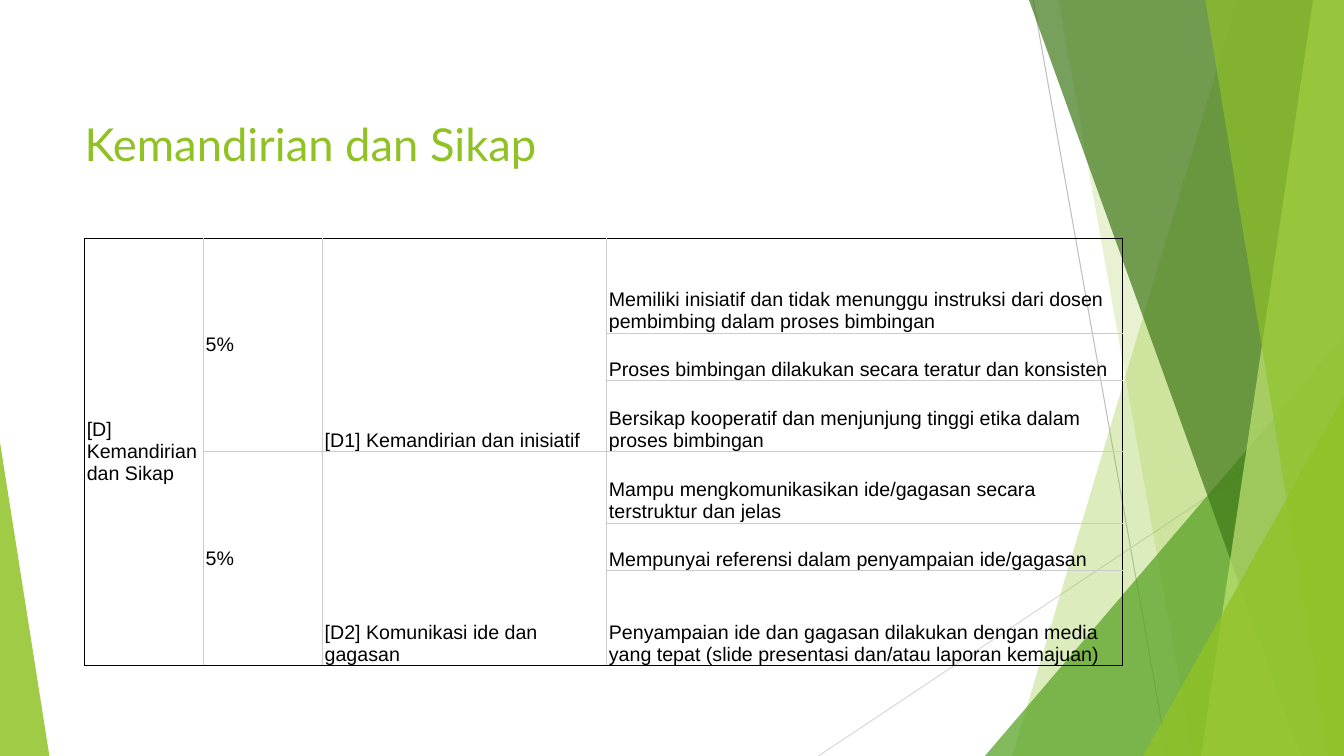
from lxml.etree import SubElement
from pptx import Presentation
from pptx.dml.color import RGBColor
from pptx.enum.shapes import MSO_CONNECTOR, MSO_SHAPE
from pptx.enum.text import MSO_ANCHOR, MSO_AUTO_SIZE, PP_ALIGN
from pptx.oxml.ns import qn
from pptx.util import Pt

WIDTH, HEIGHT = 960, 540
GREEN, BLACK, GREY = "90C226", "000000", "CCCCCC"

TITLE = "Kemandirian dan Sikap"
MIDDLE, BOTTOM = MSO_ANCHOR.MIDDLE, MSO_ANCHOR.BOTTOM
# Each column: width, anchor, then its cells as (text, rows spanned)
COLUMNS = [
    (85, MIDDLE, [("[D] Kemandirian dan Sikap", 6)]),
    (85, MIDDLE, [("5%", 3), ("5%", 3)]),
    (203, BOTTOM, [("[D1] Kemandirian dan inisiatif", 3),
                   ("[D2] Komunikasi ide dan gagasan", 3)]),
    (368.6, BOTTOM, [
        ("Memiliki inisiatif dan tidak menunggu instruksi dari dosen "
         "pembimbing dalam proses bimbingan", 1),
        ("Proses bimbingan dilakukan secara teratur dan konsisten", 1),
        ("Bersikap kooperatif dan menjunjung tinggi etika dalam proses bimbingan", 1),
        ("Mampu mengkomunikasikan ide/gagasan secara terstruktur dan jelas", 1),
        ("Mempunyai referensi dalam penyampaian ide/gagasan", 1),
        ("Penyampaian ide dan gagasan dilakukan dengan media yang tepat "
         "(slide presentasi dan/atau laporan kemajuan)", 1)]),
]
ROW_HEIGHTS = [67.8, 33.9, 51, 51, 33.9, 67.8]

# Decoration, back to front
LINES = [((738, 0), (834, HEIGHT), "BFBFBF"),
         ((WIDTH, 290), (584.6, HEIGHT), "D9D9D9")]
# Bands reach the right edge: top-left x, bottom-left x, colour, opacity
# Triangles: left, top, width, apex position, colour, opacity
DECOR = [
    ("band", (884, 723), GREEN, 30),
    ("band", (756, 852), GREEN, 20),
    ("triangle", (703.5, 240, 256.5, 1), "54A021", 72),
    ("band", (735, 929.5), "3F7819", 70),
    ("band", (938, 858), "C0E474", 70),
    ("band", (861, 949), GREEN, 65),
    ("triangle", (816.5, 283, 143.5, 1), GREEN, 80),
    ("triangle", (0, 316, 35.3, 0), GREEN, 85),
]


def rgb(color):
    return RGBColor.from_string(color)


def paint(shape, color, opacity):
    shape.shadow.inherit = False
    shape.line.fill.background()
    shape.fill.solid()
    shape.fill.fore_color.rgb = rgb(color)
    solid = shape._element.spPr.find(qn("a:solidFill"))
    SubElement(solid[0], qn("a:alpha"), val=str(opacity * 1000))


def add_band(page, top_x, bottom_x):
    outline = page.shapes.build_freeform(Pt(top_x), Pt(0))
    corners = [(WIDTH, 0), (WIDTH, HEIGHT), (bottom_x, HEIGHT)]
    outline.add_line_segments([(Pt(x), Pt(y)) for x, y in corners], close=True)
    return outline.convert_to_shape()


def add_triangle(page, left, top, width, apex):
    triangle = page.shapes.add_shape(MSO_SHAPE.ISOSCELES_TRIANGLE, Pt(left),
                                     Pt(top), Pt(width), Pt(HEIGHT - top))
    triangle.adjustments[0] = apex
    return triangle


def add_line(page, start, end, color):
    line = page.shapes.add_connector(MSO_CONNECTOR.STRAIGHT,
                                     *[Pt(value) for value in start + end])
    line.line.color.rgb = rgb(color)
    line.line.width = Pt(0.75)
    SubElement(line._element.spPr, qn("a:effectLst"))


def set_borders(cell, sides):
    """Draw the given sides (L, R, T, B in that order) ahead of the cell's fill."""
    properties = cell._tc.get_or_add_tcPr()
    for index, (side, color) in enumerate(sides.items()):
        border = SubElement(properties, qn(f"a:ln{side}"), w=str(Pt(0.6)))
        SubElement(SubElement(border, qn("a:solidFill")), qn("a:srgbClr"), val=color)
        properties.insert(index, border)


def fill_cell(cell, text, anchor):
    cell.vertical_anchor = anchor
    cell.margin_left = cell.margin_right = Pt(1.5)
    cell.margin_top = cell.margin_bottom = 0
    cell.text = text
    font = cell.text_frame.paragraphs[0].font
    font.name, font.size = "Arial", Pt(14)
    font.color.rgb = rgb(BLACK)


def add_criteria_table(page):
    last_row, last_column = len(ROW_HEIGHTS) - 1, len(COLUMNS) - 1
    frame = page.shapes.add_table(
        len(ROW_HEIGHTS), len(COLUMNS), Pt(60.5), Pt(170),
        Pt(sum(column[0] for column in COLUMNS)), Pt(sum(ROW_HEIGHTS)))
    table = frame.table
    table.first_row = table.horz_banding = False
    for row, height in zip(table.rows, ROW_HEIGHTS):
        row.height = Pt(height)
    for column, (width, anchor, entries) in enumerate(COLUMNS):
        table.columns[column].width = Pt(width)
        first = 0
        for text, span in entries:
            end = first + span - 1
            sides = {"L": BLACK if column == 0 else GREY,
                     "R": BLACK if column == last_column else GREY,
                     "T": BLACK if first == 0 else GREY,
                     "B": BLACK if end == last_row else GREY}
            origin = table.cell(first, column)
            if span > 1:
                origin.merge(table.cell(end, column))
            fill_cell(origin, text, anchor)
            for row in range(first, end + 1):
                cell = table.cell(row, column)
                cell.fill.background()
                shown = "LRTB" if row == first else "LRB" if row == end else "LR"
                set_borders(cell, {side: sides[side] for side in shown})
            first = end + 1


def add_title(page):
    title = page.shapes.title
    title.left, title.top, title.width, title.height = Pt(53.3), Pt(79.2), Pt(677), Pt(72.7)
    frame = title.text_frame
    frame.text = TITLE
    frame.word_wrap = True
    frame.auto_size = MSO_AUTO_SIZE.NONE
    frame.vertical_anchor = MSO_ANCHOR.TOP
    para = frame.paragraphs[0]
    para.alignment = PP_ALIGN.LEFT
    para.font.name, para.font.size = "Lato", Pt(32.4)
    para.font.color.rgb = rgb(GREEN)


def main():
    deck = Presentation()
    deck.slide_width, deck.slide_height = Pt(WIDTH), Pt(HEIGHT)
    page = deck.slides.add_slide(deck.slide_layouts[5])
    for start, end, color in LINES:
        add_line(page, start, end, color)
    builders = {"band": add_band, "triangle": add_triangle}
    for kind, geometry, color, opacity in DECOR:
        paint(builders[kind](page, *geometry), color, opacity)
    add_title(page)
    add_criteria_table(page)
    deck.save("out.pptx")


if __name__ == "__main__":
    main()
